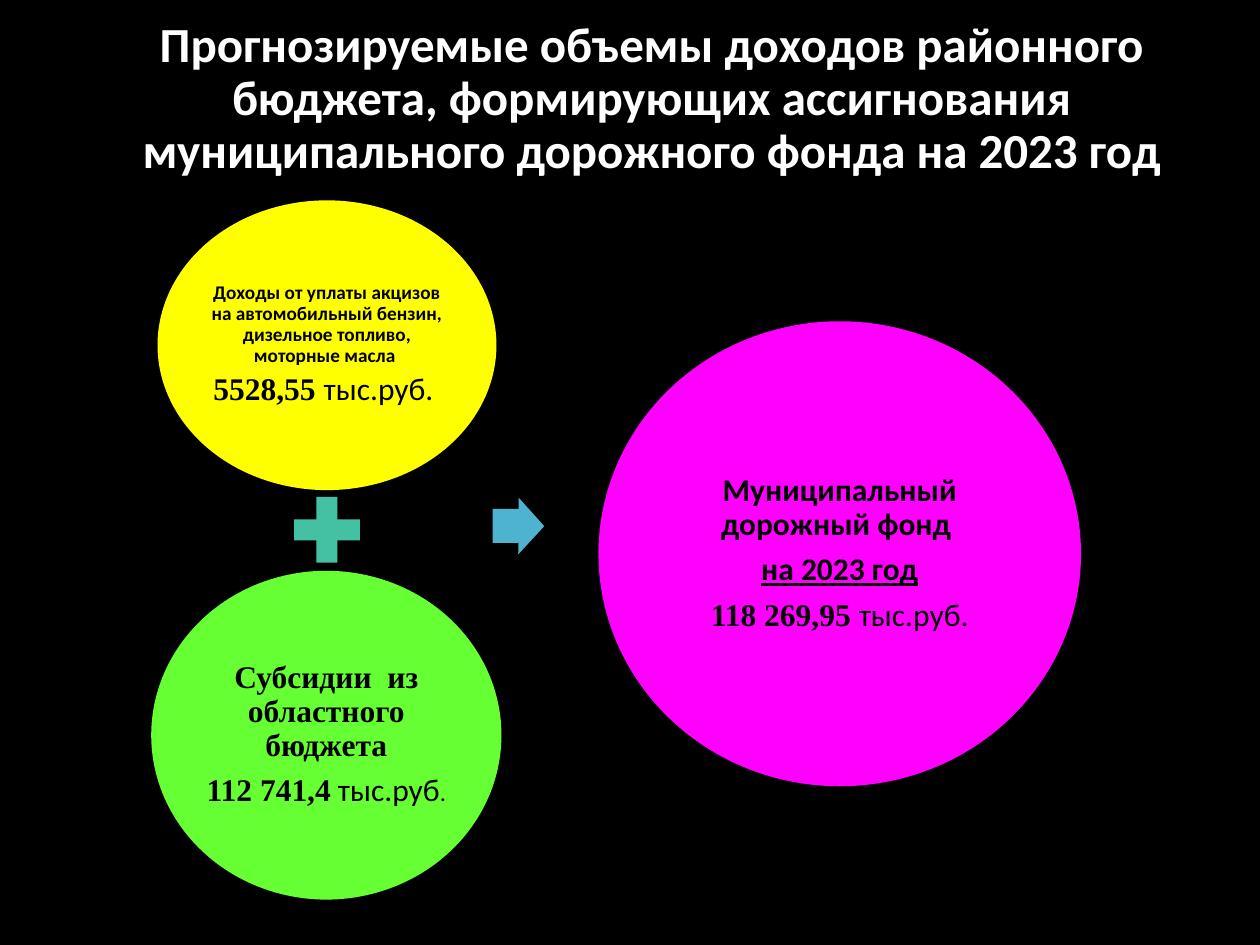
from dataclasses import dataclass

from pptx import Presentation
from pptx.dml.color import RGBColor
from pptx.enum import shapes, text
from pptx.util import Inches, Pt

SANS, SERIF = "Calibri", "Times New Roman"
BLACK, WHITE = "000000", "FFFFFF"
LINE_SPACING = 0.9
GAP_SHARE = 0.35  # space after a paragraph, as a share of its text size


@dataclass
class Span:
    wording: str
    size: float = 18
    font: str = SANS
    bold: bool = True
    underline: bool = False


@dataclass
class Figure:
    kind: shapes.MSO_SHAPE
    left: float
    top: float
    width: float
    height: float
    fill: str
    paragraphs: tuple[tuple[Span, ...], ...] = ()
    inset: float = 0.03
    rotation: float = 0


def colour(code: str) -> RGBColor:
    return RGBColor.from_string(code)


def style_font(font, span: Span, code: str) -> None:
    font.size = Pt(span.size)
    font.name = span.font
    font.bold = span.bold
    font.underline = span.underline
    font.color.rgb = colour(code)


def write(frame, paragraphs: tuple[tuple[Span, ...], ...], code: str) -> None:
    frame.word_wrap = True
    frame.vertical_anchor = text.MSO_ANCHOR.MIDDLE
    for index, spans in enumerate(paragraphs):
        para = frame.add_paragraph() if index else frame.paragraphs[0]
        para.alignment = text.PP_ALIGN.CENTER
        para.line_spacing = LINE_SPACING
        para.space_after = Pt(round(GAP_SHARE * spans[0].size, 2))
        if len(spans) == 1:
            style_font(para.font, spans[0], code)
        for span in spans:
            run = para.add_run()
            run.text = span.wording
            if len(spans) > 1:
                style_font(run.font, span, code)


def draw(page, figure: Figure) -> None:
    shape = page.shapes.add_shape(
        figure.kind, Inches(figure.left), Inches(figure.top),
        Inches(figure.width), Inches(figure.height))
    shape.shadow.inherit = False
    shape.fill.solid()
    shape.fill.fore_color.rgb = colour(figure.fill)
    shape.line.fill.background()
    shape.rotation = figure.rotation
    if figure.kind == shapes.MSO_SHAPE.RIGHT_ARROW:
        shape.adjustments[0] = 0.6
    if figure.paragraphs:
        frame = shape.text_frame
        frame.margin_left = frame.margin_right = Inches(figure.inset)
        frame.margin_top = frame.margin_bottom = Inches(figure.inset)
        write(frame, figure.paragraphs, BLACK)


TITLE = Span("Прогнозируемые объемы доходов районного бюджета, формирующих "
             "ассигнования муниципального дорожного фонда на 2023 год", 28)

FIGURES = [
    # Sources of income
    Figure(shapes.MSO_SHAPE.OVAL, 1.25, 1.59, 2.69, 2.3, "FFFF00", (
        (Span("Доходы от уплаты акцизов на автомобильный бензин, "
              "дизельное топливо, моторные масла ", 11),),
        (Span("5528,55 ", font=SERIF), Span("тыс.руб. ", bold=False)),
    ), inset=0.02),
    Figure(shapes.MSO_SHAPE.MATH_PLUS, 2.24, 3.85, 0.71, 0.71, "44C1A3"),
    Figure(shapes.MSO_SHAPE.OVAL, 1.2, 4.53, 2.78, 2.61, "66FF33", (
        (Span("Субсидии  из областного бюджета", font=SERIF),),
        (Span("112 741,4", font=SERIF), Span(" ", 16, SERIF),
         Span("тыс.руб", bold=False), Span(".", 14, bold=False)),
    )),
    # Resulting fund
    Figure(shapes.MSO_SHAPE.RIGHT_ARROW, 3.91, 3.95, 0.41, 0.45, "4EB3CF",
           rotation=0.4),
    Figure(shapes.MSO_SHAPE.OVAL, 4.75, 2.55, 3.83, 3.69, "FF00FF", (
        (Span("Муниципальный дорожный фонд "),),
        (Span("на 2023 год", underline=True),),
        (Span("118 269,95 ", font=SERIF), Span("тыс.руб.", bold=False)),
    )),
]


def main() -> None:
    deck = Presentation()
    deck.slide_width, deck.slide_height = Inches(10), Inches(7.5)
    page = deck.slides.add_slide(deck.slide_layouts[6])
    page.background.fill.solid()
    page.background.fill.fore_color.rgb = colour(BLACK)

    # Title
    box = page.shapes.add_textbox(
        Inches(0.92), Inches(-0.17), Inches(8.5), Inches(1.92))
    write(box.text_frame, ((TITLE,),), WHITE)
    box.text_frame.paragraphs[0].space_after = Pt(0)

    # Diagram
    for figure in FIGURES:
        draw(page, figure)

    deck.save("out.pptx")


if __name__ == "__main__":
    main()
